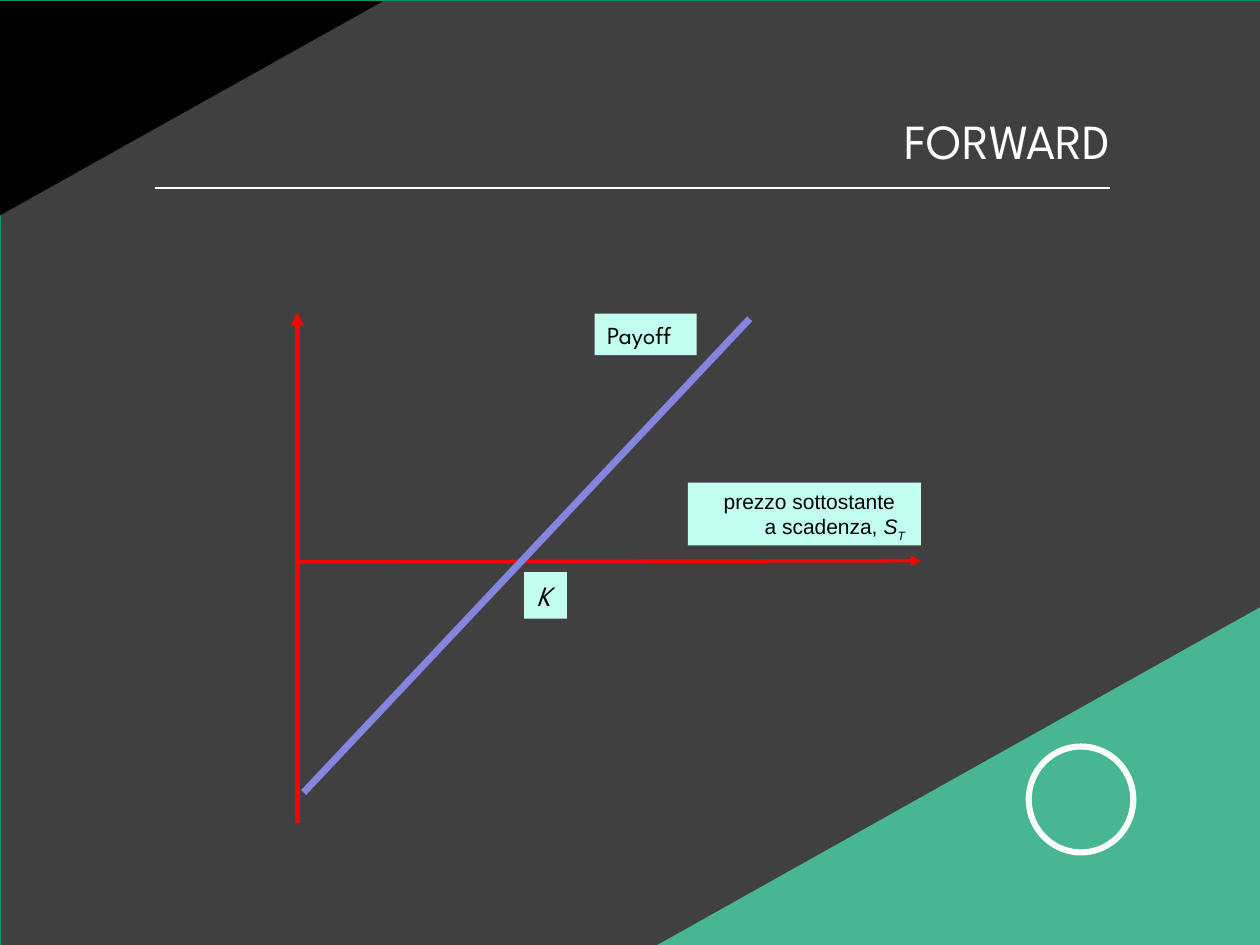
from lxml.etree import SubElement
from pptx import Presentation
from pptx.dml.color import RGBColor
from pptx.enum.shapes import MSO_CONNECTOR, MSO_SHAPE
from pptx.enum.text import MSO_ANCHOR, PP_ALIGN
from pptx.oxml.ns import qn
from pptx.util import Inches, Pt

COLORS = {
    "white": "FFFFFF", "black": "000000", "ground": "404040", "edge": "009771",
    "green": "48B593", "axis": "FF0000", "payoff": "8585E0", "label": "C2FFF0",
}
CELL = Inches(0.25)  # grid of 40 columns by 30 rows
COLUMNS, ROWS = 40, 30


def cells(*counts):
    return [round(count * CELL) for count in counts]


def rgb(name):
    return RGBColor.from_string(COLORS[name])


def add_run(paragraph, text, size=12, font="Arial", color="black",
            italic=False, baseline=0):
    run = paragraph.add_run()
    run.text = text
    run.font.size = Pt(size)
    run.font.name = font
    run.font.italic = italic
    run.font.color.rgb = rgb(color)
    if baseline:
        run.font._element.set("baseline", str(baseline * 1000))


class SlideBuilder:
    heading_font = "League Spartan"

    def __init__(self, slide):
        self.slide = slide
        self.shapes = slide.shapes

    def paint(self, shape, fill=None, line=None, width=1):
        shape.shadow.inherit = False
        if fill:
            shape.fill.solid()
            shape.fill.fore_color.rgb = rgb(fill)
        else:
            shape.fill.background()
        if line:
            shape.line.color.rgb = rgb(line)
            shape.line.width = Pt(width)
        else:
            shape.line.fill.background()
        return shape

    def preset(self, kind, place, **style):
        return self.paint(self.shapes.add_shape(kind, *cells(*place)), **style)

    def triangle(self, first, *others, fill):
        builder = self.shapes.build_freeform(*cells(*first))
        builder.add_line_segments([cells(*corner) for corner in others])
        return self.paint(builder.convert_to_shape(), fill=fill)

    def line(self, start, end, color, width, arrow=None):
        connector = self.shapes.add_connector(
            MSO_CONNECTOR.STRAIGHT, *cells(*start, *end))
        connector.line.color.rgb = rgb(color)
        connector.line.width = Pt(width)
        if arrow:
            SubElement(connector.line._get_or_add_ln(), qn(f"a:{arrow}"), type="triangle")
        SubElement(connector._element.spPr, qn("a:effectLst"))
        return connector

    def title(self, text, place):
        frame = self.shapes.add_textbox(*cells(*place)).text_frame
        frame.word_wrap = True
        frame.margin_left = frame.margin_right = 0
        frame.margin_top = frame.margin_bottom = 0
        frame.paragraphs[0].alignment = PP_ALIGN.RIGHT
        add_run(frame.paragraphs[0], text, size=28, font=self.heading_font, color="white")

    def label(self, place, *lines):
        """Each line is an indent in cells and a list of (text, format) runs."""
        frame = self.preset(MSO_SHAPE.RECTANGLE, place, fill="label").text_frame
        frame.word_wrap = True
        frame.vertical_anchor = MSO_ANCHOR.TOP
        frame.margin_right = 0
        for number, (indent, runs) in enumerate(lines):
            paragraph = frame.add_paragraph() if number else frame.paragraphs[0]
            paragraph.alignment = PP_ALIGN.LEFT
            paragraph._p.get_or_add_pPr().set("marL", str(cells(indent)[0]))
            for text, style in runs:
                add_run(paragraph, text, **style)


def main():
    deck = Presentation()
    deck.slide_width, deck.slide_height = cells(COLUMNS, ROWS)
    page = SlideBuilder(deck.slides.add_slide(deck.slide_layouts[6]))
    heading = {"font": page.heading_font}

    # Background, corners and title
    page.preset(MSO_SHAPE.RECTANGLE, (0, 0, 42.24, 32.92), fill="ground", line="edge")
    page.triangle((20.44, 30.24), (COLUMNS, 19.28), (COLUMNS, 30.24), fill="green")
    page.title("FORWARD", (27.36, 3.52, 7.88, 1.88))
    page.triangle((12.16, 0.04), (0, 6.84), (0, 0.04), fill="black")

    # Plain ring in the green corner
    page.preset(MSO_SHAPE.OVAL, (32.66, 23.7, 3.32, 3.36), line="white", width=3.5)

    # Title rule
    page.line((4.92, 5.96), (35.24, 5.96), "white", 1)

    # Payoff diagram
    page.line((9.44, 9.92), (9.44, 26.12), "axis", 2.5, arrow="headEnd")
    page.line((9.48, 17.84), (29.24, 17.8), "axis", 2, arrow="tailEnd")
    page.line((9.64, 25.16), (23.8, 10.12), "payoff", 4)

    # Diagram labels
    page.label((18.88, 9.96, 3.24, 1.32), (0, [("Payoff", {"size": 14, **heading})]))
    page.label(
        (21.84, 15.32, 7.4, 2),
        (0.74, [("prezzo sottostante", {})]),
        (2.04, [("a scadenza, ", {}), ("S", {"italic": True}),
                ("T", {"italic": True, "baseline": -25})]))
    page.label((16.64, 18.16, 1.36, 1.48),
               (0, [("K", {"size": 16, "italic": True, **heading})]))

    deck.save("out.pptx")


if __name__ == "__main__":
    main()
